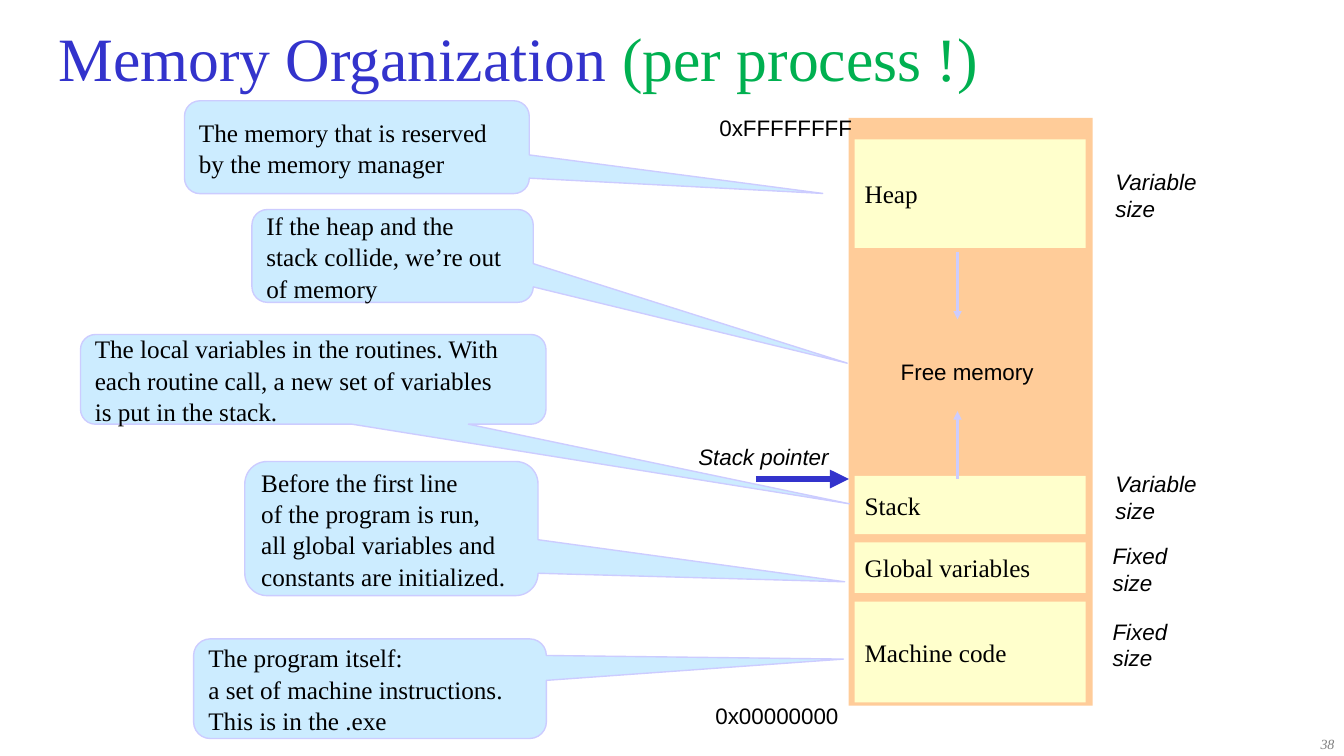
from pptx import Presentation
from pptx.dml.color import RGBColor
from pptx.enum.shapes import MSO_CONNECTOR, MSO_SHAPE
from pptx.enum.text import MSO_ANCHOR, MSO_AUTO_SIZE, PP_ALIGN
from pptx.oxml.ns import qn
from pptx.util import Cm, Pt
from lxml import etree

RECTANGLE = MSO_SHAPE.RECTANGLE
CALLOUT = MSO_SHAPE.ROUNDED_RECTANGULAR_CALLOUT
STRAIGHT = MSO_CONNECTOR.STRAIGHT
MIDDLE = MSO_ANCHOR.MIDDLE
NO_FIT = MSO_AUTO_SIZE.NONE
LEFT, RIGHT = PP_ALIGN.LEFT, PP_ALIGN.RIGHT
SERIF, SANS = "Times New Roman", "Arial"
BLUE, LILAC, BLACK = "3333CC", "CCCCFF", "000000"


def rgb(value):
    return RGBColor.from_string(value)


def write(frame, paragraphs, font, size, color=BLACK, italic=False, align=LEFT):
    """Fill a frame; a newline inside a paragraph is a line break."""
    frame.word_wrap = True
    for i, text in enumerate(paragraphs):
        paragraph = frame.paragraphs[0] if i == 0 else frame.add_paragraph()
        paragraph.alignment = align
        for j, line in enumerate(text.split("\n")):
            if j:
                paragraph.add_line_break()
            run = paragraph.add_run()
            run.text = line
            run.font.name, run.font.size = font, Pt(size)
            run.font.italic = italic
            run.font.color.rgb = rgb(color)


prs = Presentation()
prs.slide_width, prs.slide_height = Cm(33.87), Cm(19.05)
slide = prs.slides.add_slide(prs.slide_layouts[5])
shapes = slide.shapes

# Title in two colours
title = shapes.title
title.left, title.top, title.width, title.height = Cm(1.22), Cm(0.64), Cm(31.85), Cm(1.6)
title.text_frame.auto_size = NO_FIT
title.text_frame.vertical_anchor = MIDDLE
write(title.text_frame, ["Memory Organization "], SERIF, 44, BLUE)
scope = title.text_frame.paragraphs[0].add_run()
scope.text = "(per process !)"
scope.font.name, scope.font.size = SERIF, Pt(44)
scope.font.color.rgb = rgb("00B050")

# Slide number
page_number = shapes.add_textbox(Cm(26.82), Cm(18.42), Cm(7.06), Cm(0.64))
write(page_number.text_frame, ["38"], SERIF, 10, "7F7F7F", True, RIGHT)

# Memory column with its segments
segments = [
    ("", 21.39, 2.97, 6.15, 14.81, "FFCC99"),
    ("Machine code", 21.54, 15.16, 5.82, 2.54, "FFFFCC"),
    ("Global variables", 21.54, 13.67, 5.82, 1.27, "FFFFCC"),
    ("Stack", 21.54, 11.99, 5.82, 1.47, "FFFFCC"),
    ("Heap", 21.54, 3.51, 5.82, 2.74, "FFFFCC"),
]
for name, left, top, width, height, color in segments:
    segment = shapes.add_shape(RECTANGLE, Cm(left), Cm(top), Cm(width), Cm(height))
    segment.shadow.inherit = False
    segment.fill.solid()
    segment.fill.fore_color.rgb = rgb(color)
    segment.line.fill.background()
    if name:
        segment.text_frame.vertical_anchor = MIDDLE
        write(segment.text_frame, [name], SERIF, 18)

# Arrows: stack growth, heap growth, stack pointer
arrows = [
    (24.13, 12.07, 24.13, 10.36, LILAC, 2),
    (24.13, 6.35, 24.13, 8.05, LILAC, 2),
    (19.05, 12.07, 21.39, 12.07, BLUE, 4.5),
]
for x1, y1, x2, y2, color, weight in arrows:
    arrow = shapes.add_connector(STRAIGHT, Cm(x1), Cm(y1), Cm(x2), Cm(y2))
    arrow.line.color.rgb = rgb(color)
    arrow.line.width = Pt(weight)
    etree.SubElement(arrow.line._get_or_add_ln(), qn("a:tailEnd"), type="triangle")
    etree.SubElement(arrow._element.spPr, qn("a:effectLst"))

# Explanations pointing at the segments
explanations = [
    (["The program itself:", "a set of machine instructions.\nThis is in the .exe"],
     4.88, 16.1, 8.89, 2.51, 1.342, -0.297),
    (["Before the first line\nof the program is run,\nall global variables and\n"
      "constants are initialized."],
     6.17, 11.63, 7.39, 3.38, 1.546, 0.397),
    (["The local variables in the routines. With each routine call, "
      "a new set of variables\nis put in the stack."],
     2.03, 8.43, 11.73, 2.26, 1.152, 1.388),
    (["The memory that is reserved\nby the memory manager"],
     4.65, 2.54, 8.69, 2.34, 1.351, 0.498),
    (["If the heap and the\nstack collide, we’re out", "of memory"],
     6.35, 5.28, 7.09, 2.34, 1.616, 1.155),
]
for paragraphs, left, top, width, height, tip_x, tip_y in explanations:
    callout = shapes.add_shape(CALLOUT, Cm(left), Cm(top), Cm(width), Cm(height))
    callout.adjustments[0], callout.adjustments[1] = tip_x, tip_y
    callout.shadow.inherit = False
    callout.fill.solid()
    callout.fill.fore_color.rgb = rgb("CCECFF")
    callout.line.color.rgb = rgb(LILAC)
    callout.line.width = Pt(1)
    callout.text_frame.vertical_anchor = MIDDLE
    write(callout.text_frame, paragraphs, SERIF, 18)
    for paragraph in callout.text_frame.paragraphs:
        paragraph.line_spacing = 1.04

# Addresses, free memory, stack pointer and segment sizes
labels = [
    (["0x00000000"], 17.78, 17.58, 3.63, 0.94, False),
    (["0xFFFFFFFF"], 17.88, 2.74, 3.89, 0.94, False),
    (["Free memory"], 22.45, 8.89, 3.91, 0.94, False),
    (["Stack pointer"], 17.35, 11.05, 3.84, 0.94, True),
    (["Fixed", "size"], 27.79, 13.54, 2.06, 1.63, True),
    (["Fixed", "size"], 27.79, 15.44, 2.06, 1.63, True),
    (["Variable", "size"], 27.86, 4.11, 2.72, 1.63, True),
    (["Variable", "size"], 27.86, 11.73, 2.72, 1.63, True),
]
for paragraphs, left, top, width, height, italic in labels:
    label = shapes.add_textbox(Cm(left), Cm(top), Cm(width), Cm(height))
    write(label.text_frame, paragraphs, SANS, 16, italic=italic)

prs.save("out.pptx")
